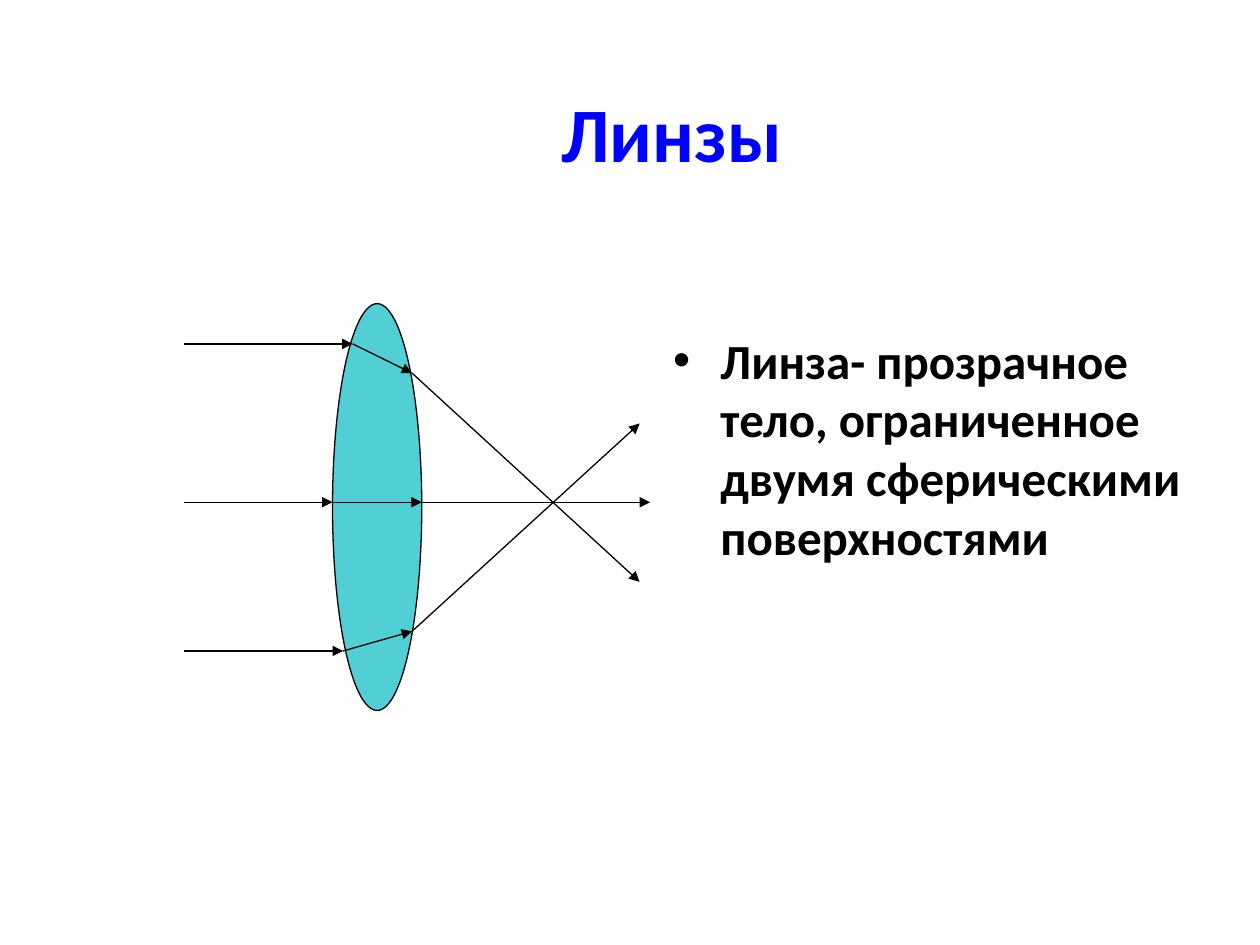
from itertools import pairwise

from lxml.etree import SubElement
from pptx import Presentation
from pptx.dml.color import RGBColor
from pptx.enum.shapes import MSO_CONNECTOR, MSO_SHAPE
from pptx.enum.text import MSO_ANCHOR, PP_ALIGN
from pptx.oxml.ns import qn
from pptx.util import Pt

# Content
HEADING = "Линзы"
DEFINITION = "Линза- прозрачное тело, ограниченное двумя сферическими поверхностями"

# Each ray: source, entry into the lens, exit from it, end (points)
RAYS = [
    [(105, 196.5), (201.5, 196.5), (235.5, 213.25), (365.5, 332.5)],
    [(105, 287), (190, 287), (241, 287), (371.5, 287)],
    [(105, 372), (196, 372), (235.5, 360.75), (365.5, 242)],
]
LENS_BOX = (190, 173.5, 51, 232.5)
HEADING_BOX = (84, 30, 600, 90)
DEFINITION_BOX = (377.5, 185, 306.5, 215)

# Style
FONT = "Calibri"
BLUE = RGBColor(0x00, 0x00, 0xFF)
BLACK = RGBColor(0x00, 0x00, 0x00)
TURQUOISE = RGBColor(0x51, 0xCF, 0xD5)
LINE_WIDTH = Pt(0.75)
BULLET_INDENT = Pt(27)


def fill_placeholder(placeholder, text, box, size, color):
    placeholder.left, placeholder.top, placeholder.width, placeholder.height = map(Pt, box)
    placeholder.text_frame.text = text
    paragraph = placeholder.text_frame.paragraphs[0]
    font = paragraph.runs[0].font
    font.name, font.size, font.bold = FONT, Pt(size), True
    font.color.rgb = color
    return paragraph


def draw_arrow(shapes, start, end):
    arrow = shapes.add_connector(MSO_CONNECTOR.STRAIGHT, *map(Pt, start + end))
    arrow.line.color.rgb = BLACK
    arrow.line.width = LINE_WIDTH
    SubElement(arrow.line._get_or_add_ln(), qn("a:tailEnd"), type="triangle")
    SubElement(arrow._element.spPr, qn("a:effectLst"))


def main():
    prs = Presentation()
    prs.slide_width, prs.slide_height = Pt(720), Pt(540)
    slide = prs.slides.add_slide(prs.slide_layouts[1])

    # Heading
    title = slide.shapes.title
    heading = fill_placeholder(title, HEADING, HEADING_BOX, 44, BLUE)
    heading.alignment = PP_ALIGN.CENTER
    title.text_frame.vertical_anchor = MSO_ANCHOR.MIDDLE

    # Bulleted definition
    body = slide.placeholders[1]
    definition = fill_placeholder(body, DEFINITION, DEFINITION_BOX, 28, BLACK)
    definition.space_before = Pt(5.6)
    properties = definition._p.get_or_add_pPr()
    properties.set("marL", str(BULLET_INDENT))
    properties.set("indent", str(-BULLET_INDENT))
    SubElement(properties, qn("a:buFont"), typeface="Arial")
    SubElement(properties, qn("a:buChar"), char="•")

    # Lens and rays
    diagram = slide.shapes.add_group_shape().shapes
    lens = diagram.add_shape(MSO_SHAPE.OVAL, *map(Pt, LENS_BOX))
    lens.shadow.inherit = False
    lens.fill.solid()
    lens.fill.fore_color.rgb = TURQUOISE
    lens.line.color.rgb = BLACK
    lens.line.width = LINE_WIDTH
    for ray in RAYS:
        for start, end in pairwise(ray):
            draw_arrow(diagram, start, end)

    prs.save("out.pptx")


if __name__ == "__main__":
    main()
